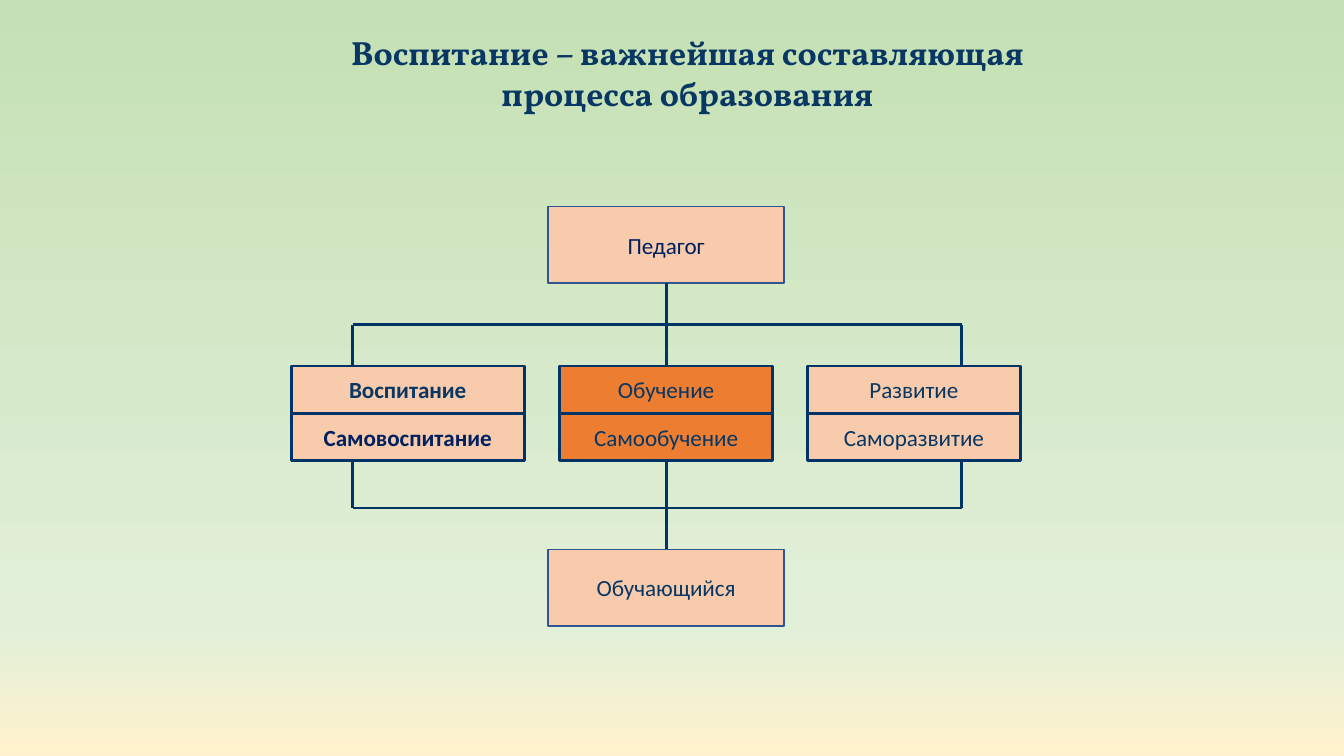
from copy import deepcopy
from dataclasses import dataclass

from lxml import etree
from pptx import Presentation
from pptx.dml.color import RGBColor
from pptx.enum import shapes, text
from pptx.oxml.ns import qn
from pptx.util import Pt

NAVY = RGBColor(0x08, 0x37, 0x63)
DEEP_BLUE = RGBColor(0x00, 0x20, 0x60)
LINE_BLUE = RGBColor(0x00, 0x33, 0x66)
EDGE_BLUE = RGBColor(0x32, 0x54, 0x91)
PEACH = RGBColor(0xF8, 0xCB, 0xAD)
ORANGE = RGBColor(0xED, 0x7D, 0x31)
BACKGROUND = [
    (0, RGBColor(0xC5, 0xE0, 0xB4)),
    (0.83, RGBColor(0xE2, 0xF0, 0xD9)),
    (1, RGBColor(0xFF, 0xF2, 0xCC)),
]

CENTER_X = 475.8
PERSON_W, PERSON_H = 168.5, 54.7
ROW_TOP, ROW_H = 261.4, 33.85
LEFT_X, RIGHT_X = 252, 687
UPPER_RAIL_Y, LOWER_RAIL_Y = 231.8, 362.9


@dataclass
class Box:
    label: str
    left: float
    top: float
    width: float
    height: float
    fill: RGBColor = PEACH
    color: RGBColor = NAVY
    bold: bool = False
    line: RGBColor = LINE_BLUE
    line_width: float = 2


@dataclass
class Column:
    labels: tuple[str, str]
    left: float
    width: float
    fill: RGBColor = PEACH
    colors: tuple[RGBColor, RGBColor] = (NAVY, NAVY)
    bold: bool = False


def format_text(shape, anchor, **font_values) -> None:
    tf = shape.text_frame
    tf.word_wrap = True
    tf.vertical_anchor = anchor
    p = tf.paragraphs[0]
    p.alignment = text.PP_ALIGN.CENTER
    font = p.runs[0].font
    font.color.rgb = font_values.pop("color")
    for name, value in font_values.items():
        setattr(font, name, value)


def draw_box(s, box: Box):
    sp = s.shapes.add_shape(
        shapes.MSO_SHAPE.RECTANGLE,
        Pt(box.left), Pt(box.top), Pt(box.width), Pt(box.height),
    )
    sp.shadow.inherit = False
    sp.fill.solid()
    sp.fill.fore_color.rgb = box.fill
    sp.line.color.rgb = box.line
    sp.line.width = Pt(box.line_width)
    sp.text_frame.text = box.label
    format_text(sp, text.MSO_ANCHOR.MIDDLE, color=box.color,
                name="Calibri", size=Pt(16.5), bold=box.bold)
    return sp


def draw_line(s, x1: float, y1: float, x2: float, y2: float):
    line = s.shapes.add_connector(
        shapes.MSO_CONNECTOR.STRAIGHT, Pt(x1), Pt(y1), Pt(x2), Pt(y2)
    )
    line.line.color.rgb = LINE_BLUE
    line.line.width = Pt(2)
    etree.SubElement(line.element.spPr, qn("a:effectLst"))
    return line


def join(s, upper, lower) -> None:
    line = draw_line(s, CENTER_X, upper.top.pt + upper.height.pt,
                     CENTER_X, lower.top.pt)
    line.begin_connect(upper, 2)
    line.end_connect(lower, 0)


def paint_background(s) -> None:
    fill = s.background.fill
    fill.gradient()
    fill.gradient_angle = 270
    stop_list = s.element.find(".//" + qn("a:gsLst"))
    stop_list.append(deepcopy(stop_list[-1]))
    for stop, (position, color) in zip(fill.gradient_stops, BACKGROUND):
        stop.position = position
        stop.color.rgb = color


def main() -> None:
    prs = Presentation()
    prs.slide_width, prs.slide_height = Pt(960), Pt(540)
    s = prs.slides.add_slide(prs.slide_layouts[5])
    paint_background(s)

    # Title
    title = s.shapes.title
    frame = {"left": 224, "top": 19.5, "width": 534, "height": 65.5}
    for name, value in frame.items():
        setattr(title, name, Pt(value))
    title.text_frame.text = "Воспитание – важнейшая составляющая процесса образования"
    title.text_frame.auto_size = text.MSO_AUTO_SIZE.SHAPE_TO_FIT_TEXT
    format_text(title, text.MSO_ANCHOR.TOP, color=NAVY,
                name="Vollkorn", size=Pt(24), bold=True)

    # Teacher and learner
    teacher, learner = [
        draw_box(s, Box(label, CENTER_X - PERSON_W / 2, top, PERSON_W, PERSON_H,
                        color=color, line=EDGE_BLUE, line_width=1))
        for label, top, color in [("Педагог", 147.6, DEEP_BLUE),
                                  ("Обучающийся", 392.4, NAVY)]
    ]

    # Three pairs of processes
    columns = [
        Column(("Воспитание", "Самовоспитание"), 208, 166.5,
               colors=(NAVY, DEEP_BLUE), bold=True),
        Column(("Обучение", "Самообучение"), CENTER_X - 76, 152, fill=ORANGE),
        Column(("Развитие", "Саморазвитие"), 576.8, 152),
    ]
    pairs = [
        [draw_box(s, Box(label, c.left, ROW_TOP + row * ROW_H, c.width, ROW_H,
                         c.fill, color, c.bold))
         for row, (label, color) in enumerate(zip(c.labels, c.colors))]
        for c in columns
    ]

    # Rails with their side branches
    rows_bottom = ROW_TOP + 2 * ROW_H
    for rail_y, row_edge in [(UPPER_RAIL_Y, ROW_TOP), (LOWER_RAIL_Y, rows_bottom)]:
        draw_line(s, LEFT_X, rail_y, RIGHT_X, rail_y)
        for x in (LEFT_X, RIGHT_X):
            draw_line(s, x, rail_y, x, row_edge)

    # Central trunk
    learning, self_learning = pairs[1]
    join(s, teacher, learning)
    join(s, self_learning, learner)

    prs.save("out.pptx")


if __name__ == "__main__":
    main()
